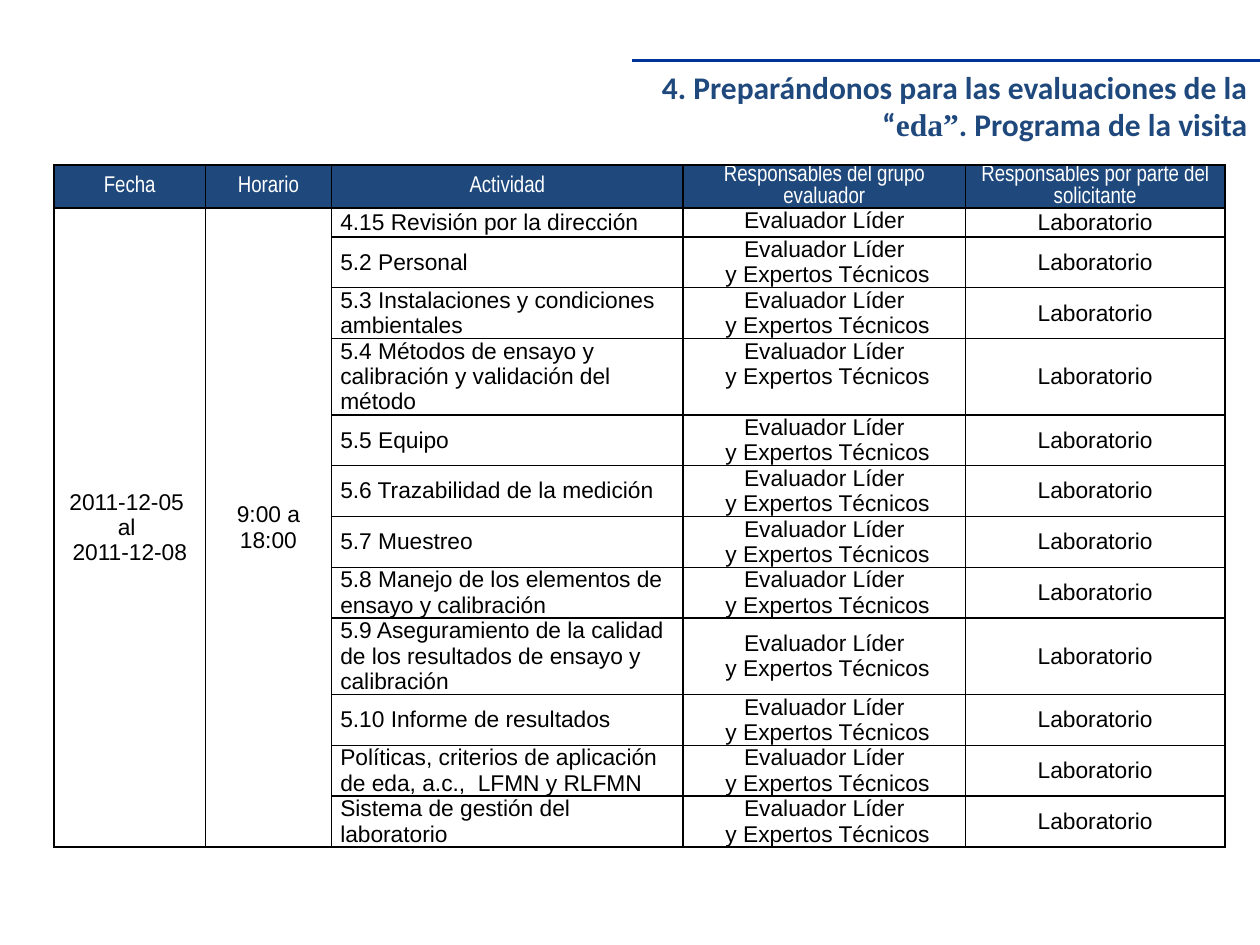
"""Build the slide with the programme of the evaluation visit."""
from lxml import etree
from pptx import Presentation
from pptx.dml.color import RGBColor
from pptx.enum.shapes import MSO_CONNECTOR
from pptx.enum.text import MSO_ANCHOR, MSO_AUTO_SIZE, PP_ALIGN
from pptx.oxml import parse_xml
from pptx.oxml.ns import nsdecls, qn
from pptx.util import Cm, Pt

STRAIGHT = MSO_CONNECTOR.STRAIGHT
TOP, MIDDLE = MSO_ANCHOR.TOP, MSO_ANCHOR.MIDDLE
GROW = MSO_AUTO_SIZE.SHAPE_TO_FIT_TEXT
LEFT, CENTER, RIGHT = PP_ALIGN.LEFT, PP_ALIGN.CENTER, PP_ALIGN.RIGHT
NAVY, BLUE, BLACK, WHITE = "1F497D", "003399", "000000", "FFFFFF"

HEADERS = ["Fecha", "Horario", "Actividad", "Responsables del grupo evaluador",
           "Responsables por parte del solicitante"]
ACTIVITIES = [
    "4.15 Revisión por la dirección",
    "5.2 Personal",
    "5.3 Instalaciones y condiciones ambientales",
    "5.4 Métodos de ensayo y calibración y validación del método",
    "5.5 Equipo",
    "5.6 Trazabilidad de la medición",
    "5.7 Muestreo",
    "5.8 Manejo de los elementos de ensayo y calibración",
    "5.9 Aseguramiento de la calidad de los resultados de ensayo y calibración",
    "5.10 Informe de resultados",
    "Políticas, criterios de aplicación de eda, a.c.,  LFMN y RLFMN",
    "Sistema de gestión del laboratorio",
]
WIDTHS = [3.05, 2.54, 7.09, 5.69, 5.23]
ROW_HEIGHT = 0.58
CELL_FORMAT = {"margin_left": Cm(0.05), "margin_right": Cm(0.05),
               "margin_top": 0, "margin_bottom": 0}
HEADER_FONT = {"name": "Arial Narrow", "size": Pt(13)}
BODY_FONT = {"name": "Arial", "size": Pt(13)}
TITLE_FONT = {"name": "Calibri", "size": Pt(18), "bold": True}


def rgb(value):
    return RGBColor.from_string(value)


def add_run(p, text, font, color):
    r = p.add_run()
    r.text = text
    for name, value in font.items():
        setattr(r.font, name, value)
    r.font.color.rgb = rgb(color)


prs = Presentation()
prs.slide_width, prs.slide_height = Cm(25.4), Cm(19.05)
s = prs.slides.add_slide(prs.slide_layouts[6])

line = s.shapes.add_connector(STRAIGHT, Cm(25.4), Cm(1.22), Cm(12.75), Cm(1.22))
line.line.color.rgb = rgb(BLUE)
line.line.width = Pt(1.5)
etree.SubElement(line._element.spPr, qn("a:effectLst"))

rows = [[[text] for text in HEADERS]]
for n, activity in enumerate(ACTIVITIES):
    reviewers = ["Evaluador Líder"] + [" y Expertos Técnicos"] * (n > 0)
    rows.append([[], [], [activity], reviewers, ["Laboratorio"]])
rows[1][:2] = [["2011-12-05 ", "al ", "2011-12-08"], ["9:00 a 18:00"]]

frame = s.shapes.add_table(len(rows), len(WIDTHS), Cm(1.09), Cm(3.33),
                           Cm(sum(WIDTHS)), Cm(ROW_HEIGHT * len(rows)))
table = frame.table
table.first_row = table.horz_banding = False
for column, width in zip(table.columns, WIDTHS):
    column.width = Cm(width)

for i, row in enumerate(rows):
    table.rows[i].height = Cm(ROW_HEIGHT)
    for j, lines in enumerate(row):
        cell = table.cell(i, j)
        for name, value in CELL_FORMAT.items():
            setattr(cell, name, value)
        cell.vertical_anchor = TOP if j == 3 and (i == 1 or i and i % 2 == 0) else MIDDLE
        tcPr = cell._tc.get_or_add_tcPr()
        for side in "LRTB":
            tcPr.append(parse_xml(
                f'<a:ln{side} {nsdecls("a")} w="12700"><a:solidFill>'
                f'<a:srgbClr val="{BLACK}"/></a:solidFill></a:ln{side}>'))
        if i == 0:
            cell.fill.solid()
            cell.fill.fore_color.rgb = rgb(NAVY)
        else:
            cell.fill.background()
        tf = cell.text_frame
        for k, text in enumerate(lines):
            p = tf.add_paragraph() if k else tf.paragraphs[0]
            p.alignment = LEFT if i and j == 2 else CENTER
            if i and j == 2:
                p._p.get_or_add_pPr().set("marL", str(Cm(0.13)))
            add_run(p, text, BODY_FONT if i else HEADER_FONT, BLACK if i else WHITE)

for j in range(2):
    table.cell(1, j).merge(table.cell(len(rows) - 1, j))

sp = s.shapes.add_textbox(Cm(12.7), Cm(1.24), Cm(12.7), Cm(1.8))
tf = sp.text_frame
tf.word_wrap = True
tf.auto_size = GROW
p = tf.paragraphs[0]
p.alignment = RIGHT
pPr = p._p.get_or_add_pPr()
pPr.set("marL", str(Cm(1.27)))
pPr.set("indent", str(Cm(-1.27)))
for text, name in [("4. Preparándonos para las evaluaciones de la “", "Calibri"),
                   ("eda”", "Times New Roman"),
                   (". Programa de la visita", "Calibri")]:
    add_run(p, text, {**TITLE_FONT, "name": name}, NAVY)

prs.save("out.pptx")
